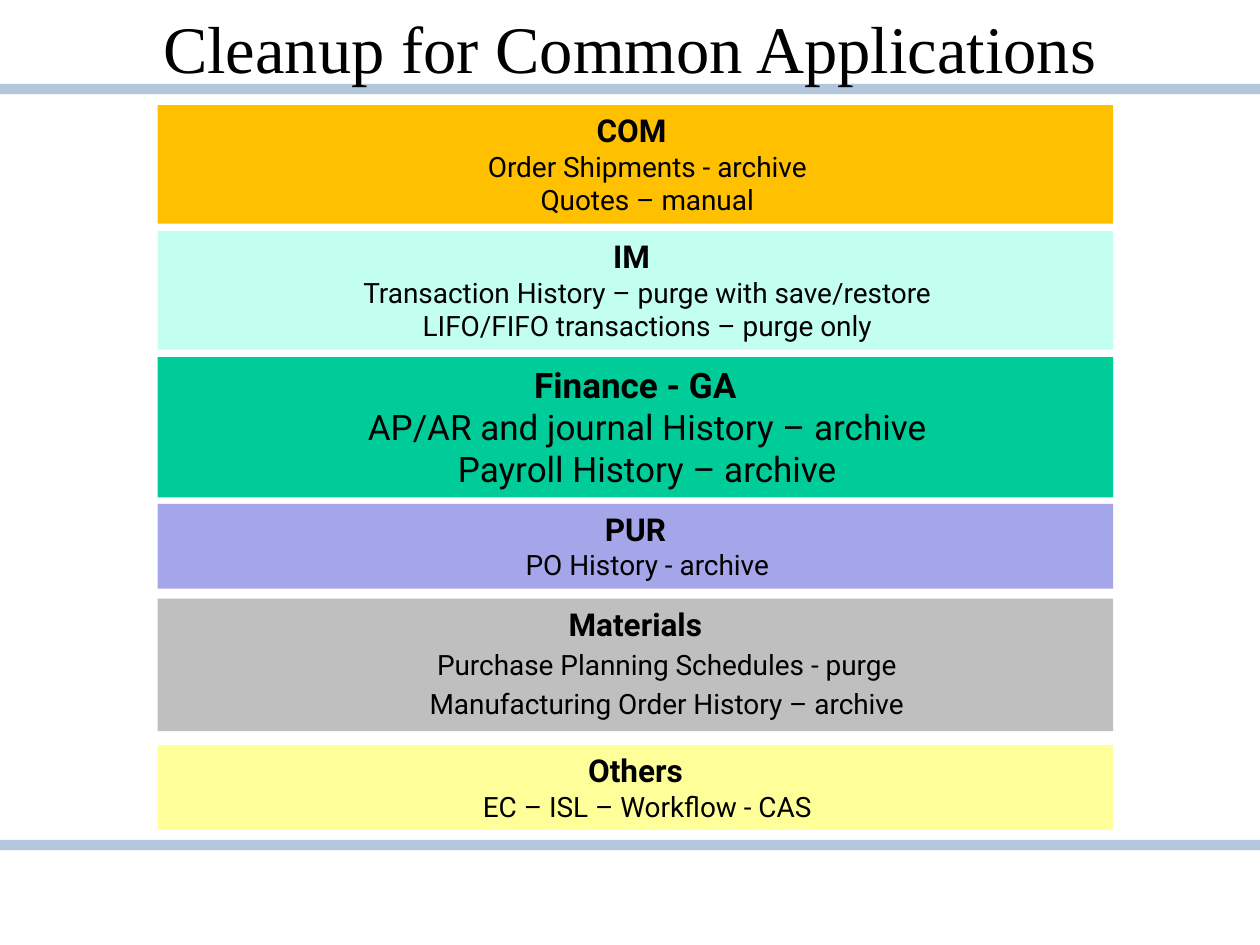
from dataclasses import dataclass

from pptx import Presentation
from pptx.dml.color import RGBColor as RGB
from pptx.enum.shapes import MSO_SHAPE as Shape
from pptx.enum.text import MSO_ANCHOR as Anchor, MSO_AUTO_SIZE as AutoSize, PP_ALIGN as Align
from pptx.util import Cm, Pt


@dataclass(frozen=True)
class Theme:
    title_font: str = "Times New Roman"
    body_font: str = "Roboto"
    text: str = "000000"
    rule: str = "B2C6DC"
    title_size: int = 38
    large: int = 20
    heading: int = 18
    item: int = 16


THEME = Theme()
SLIDE_W, SLIDE_H = Cm(25.4), Cm(19.05)
PANEL_LEFT, PANEL_W = Cm(3.18), Cm(19.26)


def format_text(p, text, *, font=THEME.body_font, size=THEME.item, bold=False,
                level=0, indent=0, before=0):
    p.alignment = Align.CENTER
    p.level = level
    if indent:
        pPr = p._p.get_or_add_pPr()
        pPr.set("marL", str(Cm(indent)))
        pPr.set("indent", "0")
    p.space_before = Pt(before)
    r = p.add_run()
    r.text = text
    r.font.name, r.font.size, r.font.bold = font, Pt(size), bold
    r.font.color.rgb = RGB.from_string(THEME.text)


def add_rect(s, left, top, width, height, color):
    sp = s.shapes.add_shape(Shape.RECTANGLE, left, top, width, height)
    sp.shadow.inherit = False
    sp.fill.solid()
    sp.fill.fore_color.rgb = RGB.from_string(color)
    sp.line.fill.background()
    return sp


def add_rule(s, top):
    """Add a full-width bar behind everything else."""
    sp = add_rect(s, 0, Cm(top), SLIDE_W, Cm(0.21), THEME.rule)
    s.shapes._spTree.insert(2, sp._element)


def set_title(s, text):
    sp = s.shapes.title
    sp.left, sp.top, sp.width, sp.height = Cm(1.27), Cm(0), Cm(22.86), Cm(1.9)
    tf = sp.text_frame
    tf.auto_size = AutoSize.NONE
    tf.vertical_anchor = Anchor.MIDDLE
    format_text(tf.paragraphs[0], text, font=THEME.title_font, size=THEME.title_size)


def add_panel(s, top, height, color, heading, items, *, heading_size=THEME.heading,
              item_size=THEME.item, indent=0.48, before=0):
    sp = add_rect(s, PANEL_LEFT, Cm(top), PANEL_W, Cm(height), color)
    tf = sp.text_frame
    tf.word_wrap = True
    tf.auto_size = AutoSize.SHAPE_TO_FIT_TEXT
    tf.vertical_anchor = Anchor.TOP
    format_text(tf.paragraphs[0], heading, size=heading_size, bold=True)
    for item in items:
        format_text(tf.add_paragraph(), item, size=item_size, level=1,
                    indent=indent, before=before)


def main():
    prs = Presentation()
    prs.slide_width, prs.slide_height = SLIDE_W, SLIDE_H
    s = prs.slides.add_slide(prs.slide_layouts[5])
    for top in (1.69, 16.93):
        add_rule(s, top)
    set_title(s, "Cleanup for Common Applications")
    add_panel(s, 2.12, 2.39, "FFC000", "COM ",
              ["Order Shipments - archive", "Quotes – manual"])
    add_panel(s, 4.66, 2.39, "C2FFF0", "IM ",
              ["Transaction History – purge with save/restore",
               "LIFO/FIFO transactions – purge only"])
    add_panel(s, 7.2, 2.83, "00CC99", "Finance - GA",
              ["AP/AR and journal History – archive", "Payroll History – archive"],
              heading_size=THEME.large, item_size=THEME.large)
    add_panel(s, 10.16, 1.71, "A5A5E9", "PUR", ["PO History - archive"])
    add_panel(s, 12.07, 2.67, "BFBFBF", "Materials",
              ["Purchase Planning Schedules - purge",
               "Manufacturing Order History – archive"],
              indent=1.27, before=3)
    add_panel(s, 15.02, 1.71, "FFFF99", "Others", ["EC – ISL – Workflow - CAS"])
    prs.save("out.pptx")


if __name__ == "__main__":
    main()
